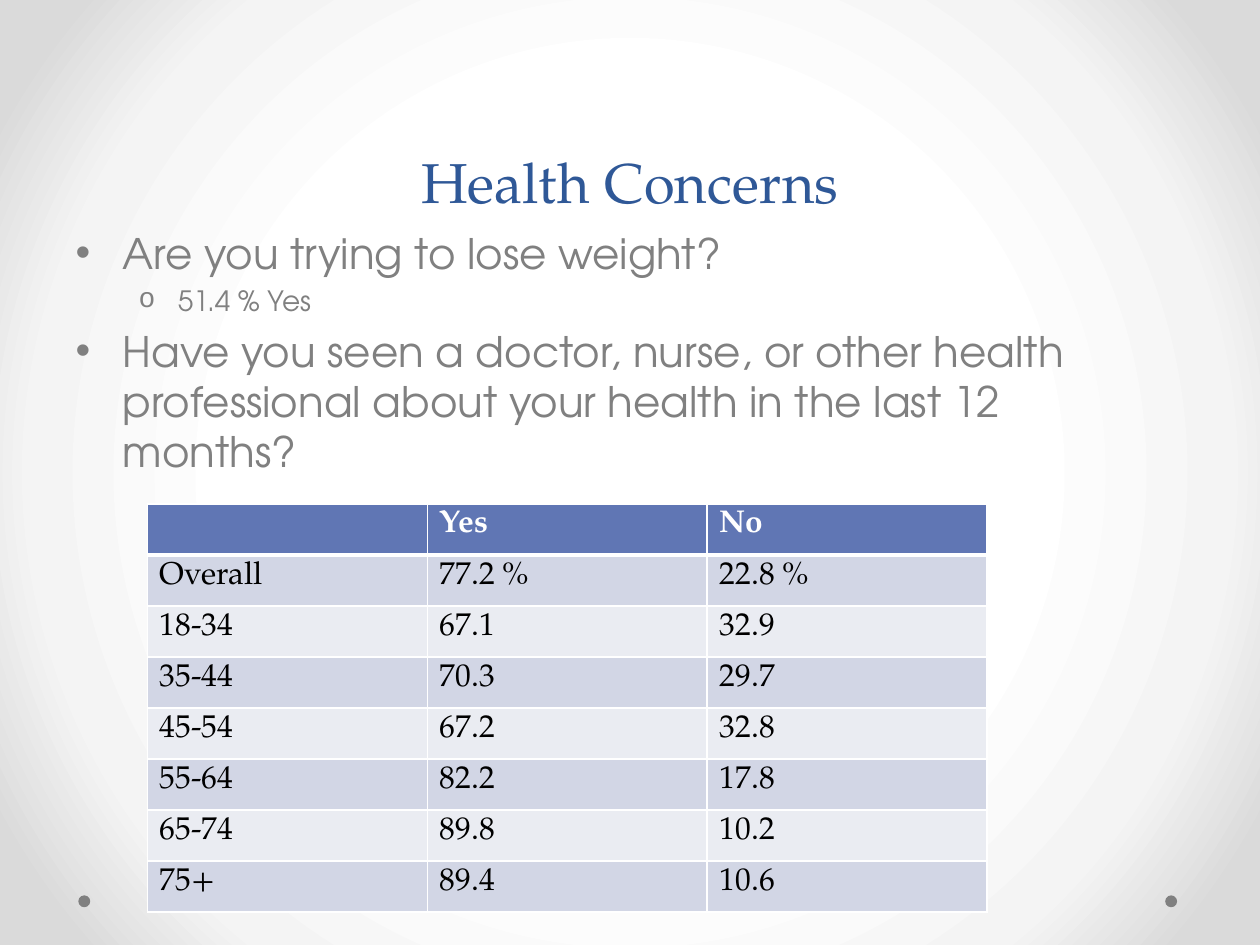
import lxml.etree
import pptx
import pptx.dml.color
import pptx.enum.shapes
import pptx.enum.text
import pptx.oxml
import pptx.oxml.ns
import pptx.util
from pptx.util import Cm

COLORS = {
    "title": "2F5897", "gray": "808080", "header": "6076B4",
    "odd_row": "D2D6E5", "even_row": "EAECF2",
    "white": "FFFFFF", "black": "000000",
}
BACKGROUND_STOPS = [(50, "FFFFFF"), (76, "F4F4F4"), (92, "DADADA")]
HEADING_FONT = "TeX Gyre Pagella"
BODY_FONT = "TeX Gyre Adventor"

QUESTIONS = [
    (0, "Are you trying to lose weight?"),
    (1, "51.4 % Yes"),
    (0, "Have you seen a doctor, nurse, or other health professional "
        "about your health in the last 12 months?"),
]
VISITS = [
    ("", "Yes", "No"),
    ("Overall", "77.2 %", "22.8 %"),
    ("18-34", "67.1", "32.9"),
    ("35-44", "70.3", "29.7"),
    ("45-54", "67.2", "32.8"),
    ("55-64", "82.2", "17.8"),
    ("65-74", "89.8", "10.2"),
    ("75+", "89.4", "10.6"),
]


def rgb(name):
    return pptx.dml.color.RGBColor.from_string(COLORS[name])


def drawing_xml(tag, content):
    return pptx.oxml.parse_xml(
        f'<a:{tag} {pptx.oxml.ns.nsdecls("a")}>{content}</a:{tag}>')


def format_runs(paragraph, font, size, color, bold=False):
    for run in paragraph.runs:
        run.font.name = font
        run.font.size = pptx.util.Pt(size)
        run.font.bold = bold
        run.font.color.rgb = rgb(color)


def move(shape, left, top, width, height):
    shape.left, shape.top, shape.width, shape.height = left, top, width, height


def paint_background(slide):
    """Radial gradient, white in the middle and gray at the corners."""
    slide.background.fill.gradient()
    gradient = slide.background._cSld.find(".//" + pptx.oxml.ns.qn("a:gradFill"))
    stops = "".join(
        f'<a:gs pos="{position * 1000}"><a:srgbClr val="{color}"/></a:gs>'
        for position, color in BACKGROUND_STOPS)
    center = '<a:fillToRect l="50000" t="50000" r="50000" b="50000"/>'
    gradient.getparent().replace(gradient, drawing_xml(
        "gradFill",
        f'<a:gsLst>{stops}</a:gsLst><a:path path="circle">{center}</a:path>'))


def add_corner_dots(slide, left, top, width, size):
    for dot_left in (left, left + width - size):
        dot = slide.shapes.add_shape(
            pptx.enum.shapes.MSO_SHAPE.OVAL, dot_left, top, size, size)
        dot.shadow.inherit = False
        dot.fill.solid()
        dot.fill.fore_color.rgb = rgb("gray")
        dot.line.fill.background()


def fill_title(slide, left, top, width, height):
    title = slide.shapes.title
    move(title, left, top, width, height)
    frame = title.text_frame
    frame.text = "Health Concerns"
    frame.auto_size = pptx.enum.text.MSO_AUTO_SIZE.NONE
    frame.vertical_anchor = pptx.enum.text.MSO_ANCHOR.BOTTOM
    paragraph = frame.paragraphs[0]
    paragraph.alignment = pptx.enum.text.PP_ALIGN.CENTER
    paragraph.line_spacing = pptx.util.Pt(58)
    format_runs(paragraph, HEADING_FONT, 32, "title")


def fill_questions(slide, left, top, width, height):
    body = slide.placeholders[1]
    move(body, left, top, width, height)
    frame = body.text_frame
    frame.text = "\n".join(text for _, text in QUESTIONS)
    frame.auto_size = pptx.enum.text.MSO_AUTO_SIZE.NONE
    for paragraph, (level, _) in zip(frame.paragraphs, QUESTIONS):
        paragraph.level = level
        format_runs(paragraph, BODY_FONT, 16 if level else 24, "gray")
        if level:
            properties = paragraph._p.get_or_add_pPr()
            for tag, attribute, value in (("buFont", "typeface", "Courier New"),
                                          ("buChar", "char", "o")):
                bullet = lxml.etree.SubElement(
                    properties, pptx.oxml.ns.qn(f"a:{tag}"))
                bullet.set(attribute, value)


def set_borders(cell, bottom_points, top_points):
    points = {"lnL": 1, "lnR": 1, "lnT": top_points, "lnB": bottom_points}
    properties = cell._tc.get_or_add_tcPr()
    for index, (tag, width) in enumerate(points.items()):
        line = drawing_xml(
            tag, f'<a:solidFill><a:srgbClr val="{COLORS["white"]}"/></a:solidFill>')
        line.set("w", str(pptx.util.Pt(width)))
        properties.insert(index, line)


def add_visits_table(slide, left, top, width, height):
    table = slide.shapes.add_table(
        len(VISITS), len(VISITS[0]), left, top, width, height).table
    for row_index, values in enumerate(VISITS):
        header = row_index == 0
        fill = "header" if header else "odd_row" if row_index % 2 else "even_row"
        for column_index, value in enumerate(values):
            cell = table.cell(row_index, column_index)
            cell.fill.solid()
            cell.fill.fore_color.rgb = rgb(fill)
            set_borders(cell, 3 if header else 1, 3 if row_index == 1 else 1)
            cell.text = value
            format_runs(cell.text_frame.paragraphs[0], HEADING_FONT, 18,
                        "white" if header else "black", header)


def main():
    presentation = pptx.Presentation()
    presentation.slide_width, presentation.slide_height = Cm(25.4), Cm(19.05)
    slide = presentation.slides.add_slide(presentation.slide_layouts[1])
    paint_background(slide)
    add_corner_dots(slide, Cm(1.58), Cm(18.05), Cm(22.15), Cm(0.24))
    fill_title(slide, Cm(1.27), Cm(0), Cm(22.86), Cm(4.45))
    fill_questions(slide, Cm(1.27), Cm(4.45), Cm(22.86), Cm(12.57))
    add_visits_table(slide, Cm(2.97), Cm(10.16), Cm(16.93), Cm(8.23))
    presentation.save("out.pptx")


if __name__ == "__main__":
    main()
